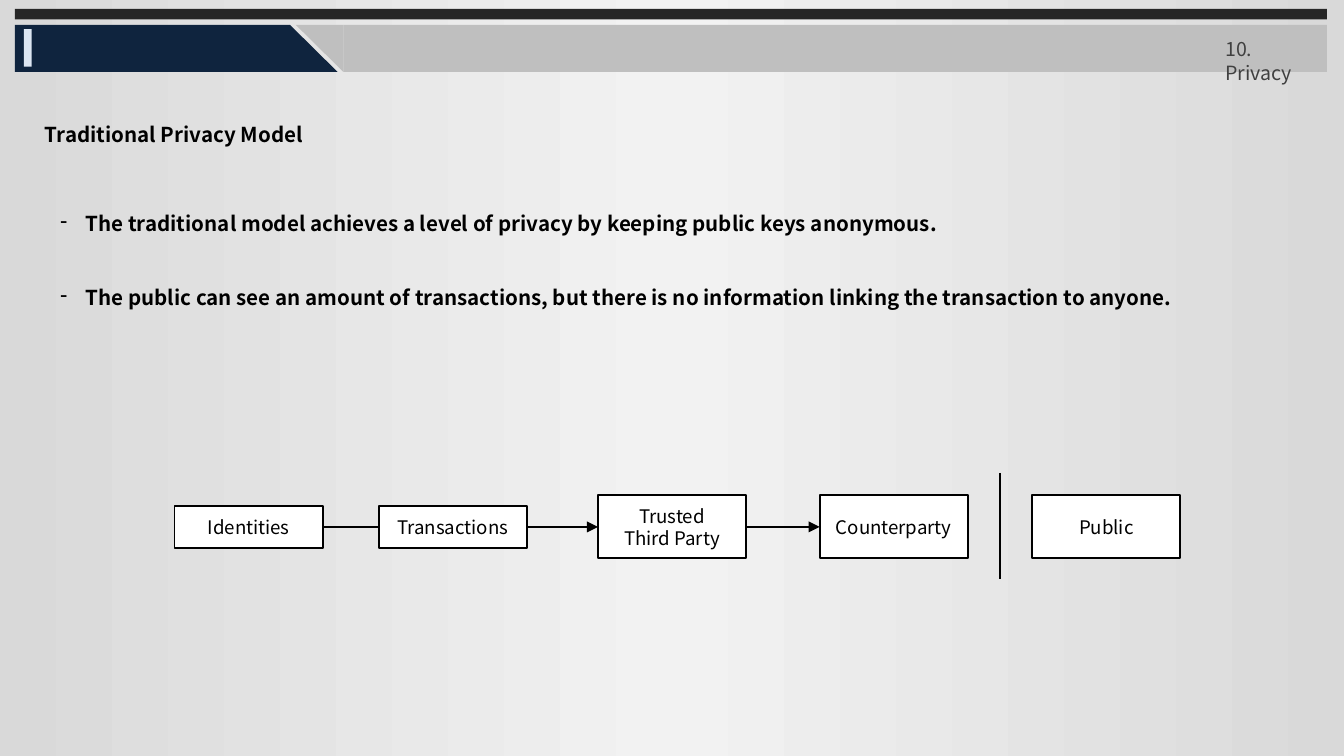
from copy import deepcopy

from pptx import Presentation
from pptx import util as u
from pptx.dml.color import RGBColor
from pptx.enum import shapes as es, text as et
from pptx.oxml.ns import qn
from pptx.oxml.xmlchemy import OxmlElement

FONT = "Noto Sans CJK KR"
NAVY, GREY, BLACK = "0F243E", "BFBFBF", "000000"
RECT = es.MSO_SHAPE.RECTANGLE
WEDGE = es.MSO_SHAPE.RIGHT_TRIANGLE
MID = 9.96  # centre line of the flow, cm
POINTS = [
    "The traditional model achieves a level of privacy by keeping public keys anonymous.",
    "The public can see an amount of transactions, but there is no information "
    "linking the transaction to anyone.",
]
# label, left, height
STEPS = [
    ("Identities", 3.3, 0.79),
    ("Transactions", 7.16, 0.79),
    ("Trusted\nThird Party", 11.3, 1.19),
    ("Counterparty", 15.49, 1.19),
    ("Public", 19.51, 1.19),
]


def color(code):
    return RGBColor.from_string(code)


def cms(*sizes):
    return [u.Cm(size) for size in sizes]


def write(frame, *lines, size=11, ink=BLACK, bold=False, align=et.PP_ALIGN.LEFT,
          anchor=et.MSO_ANCHOR.TOP, space=None, gap=0, dash=False):
    """Fill a text frame, one paragraph per line; gap is the space between them."""
    frame.word_wrap = True
    frame.vertical_anchor = anchor
    for i, line in enumerate(lines):
        para = frame.add_paragraph() if i else frame.paragraphs[0]
        para.text = line
        para.alignment = align
        if space:
            para.line_spacing = space
        if i:
            para.space_before = u.Pt(gap)
        if dash:
            add_dash(para)
        for run in para.runs:
            font = run.font
            font.name, font.size, font.bold = FONT, u.Pt(size), bold
            font.color.rgb = color(ink)
            east = OxmlElement("a:ea")
            east.set("typeface", FONT)
            run._r.get_or_add_rPr().append(east)


def add_dash(para):
    props = para._p.get_or_add_pPr()
    props.set("marL", str(u.Cm(0.48)))
    props.set("indent", str(-u.Cm(0.48)))
    mark = OxmlElement("a:buChar")
    mark.set("char", "-")
    props.append(mark)


def add_block(shapes, kind, place, fill, line=None):
    block = shapes.add_shape(kind, *cms(*place))
    block.shadow.inherit = False
    block.fill.solid()
    block.fill.fore_color.rgb = color(fill)
    if line:
        block.line.color.rgb = color(line)
        block.line.width = u.Pt(1)
    else:
        block.line.fill.background()
    return block


def add_line(shapes, ends=(0, 0, 0, 0), link=None, arrow=False):
    """Draw a line between two points, or from the first to the second box of link."""
    line = shapes.add_connector(es.MSO_CONNECTOR.STRAIGHT, *cms(*ends))
    if link:
        line.begin_connect(link[0], 3)
        line.end_connect(link[1], 1)
    line.line.color.rgb = color(BLACK)
    line.line.width = u.Pt(1)
    if arrow:
        tail = OxmlElement("a:tailEnd")
        tail.set("type", "triangle")
        line.line._get_or_add_ln().append(tail)
    line._element.spPr.append(OxmlElement("a:effectLst"))


def add_text(shapes, place, *lines, **style):
    box = shapes.add_textbox(*cms(*place))
    write(box.text_frame, *lines, **style)


def set_back(slide):
    fill = slide.background.fill
    fill.gradient()
    fill.gradient_angle = 0
    for stop in fill.gradient_stops:
        stop.color.rgb = color("D9D9D9")
    stops = slide._element.find(".//" + qn("a:gsLst"))
    mid = deepcopy(stops[0])
    mid.set("pos", "50000")
    mid[0].set("val", "F2F2F2")
    stops.insert(1, mid)


def add_header(shapes):
    add_block(shapes, RECT, (0.28, 0.17, 24.8, 0.2), "262626")
    add_block(shapes, RECT, (0.28, 0.47, 5.2, 0.89), NAVY)
    add_block(shapes, WEDGE, (5.48, 0.47, 0.9, 0.89), NAVY)
    band = shapes.add_group_shape().shapes
    add_block(band, RECT, (6.49, 0.47, 18.59, 0.89), GREY)
    add_block(band, WEDGE, (5.59, 0.47, 0.9, 0.89), GREY).rotation = 180
    add_block(shapes, RECT, (0.45, 0.55, 0.15, 0.71), "DCE6F2")
    add_text(shapes, (22.91, 0.58, 2.31, 0.71), "10. Privacy", size=10.5, ink="404040")


def set_title(title):
    title.left, title.top, title.width, title.height = cms(0.46, 2.18, 5.66, 0.74)
    write(title.text_frame, "Traditional Privacy Model", bold=True,
          align=et.PP_ALIGN.CENTER)
    title.text_frame.auto_size = et.MSO_AUTO_SIZE.NONE


def add_flow(shapes):
    boxes = []
    for label, left, high in STEPS:
        box = add_block(shapes, RECT, (left, MID - high / 2, 2.8, high), "FFFFFF", BLACK)
        write(box.text_frame, label, size=10, align=et.PP_ALIGN.CENTER,
              anchor=et.MSO_ANCHOR.MIDDLE)
        boxes.append(box)
    for i in range(3):
        add_line(shapes, link=boxes[i:i + 2], arrow=i > 0)
    add_line(shapes, (18.9, 8.94, 18.9, 10.95))


def main():
    deck = Presentation()
    deck.slide_width, deck.slide_height = cms(25.4, 14.29)
    slide = deck.slides.add_slide(deck.slide_layouts[5])
    set_back(slide)
    set_title(slide.shapes.title)
    add_header(slide.shapes)
    add_flow(slide.shapes)
    add_text(slide.shapes, (0.89, 3.63, 23.01, 3.78), *POINTS, bold=True,
             align=et.PP_ALIGN.JUSTIFY, space=1.5, gap=19.8, dash=True)
    deck.save("out.pptx")


if __name__ == "__main__":
    main()
